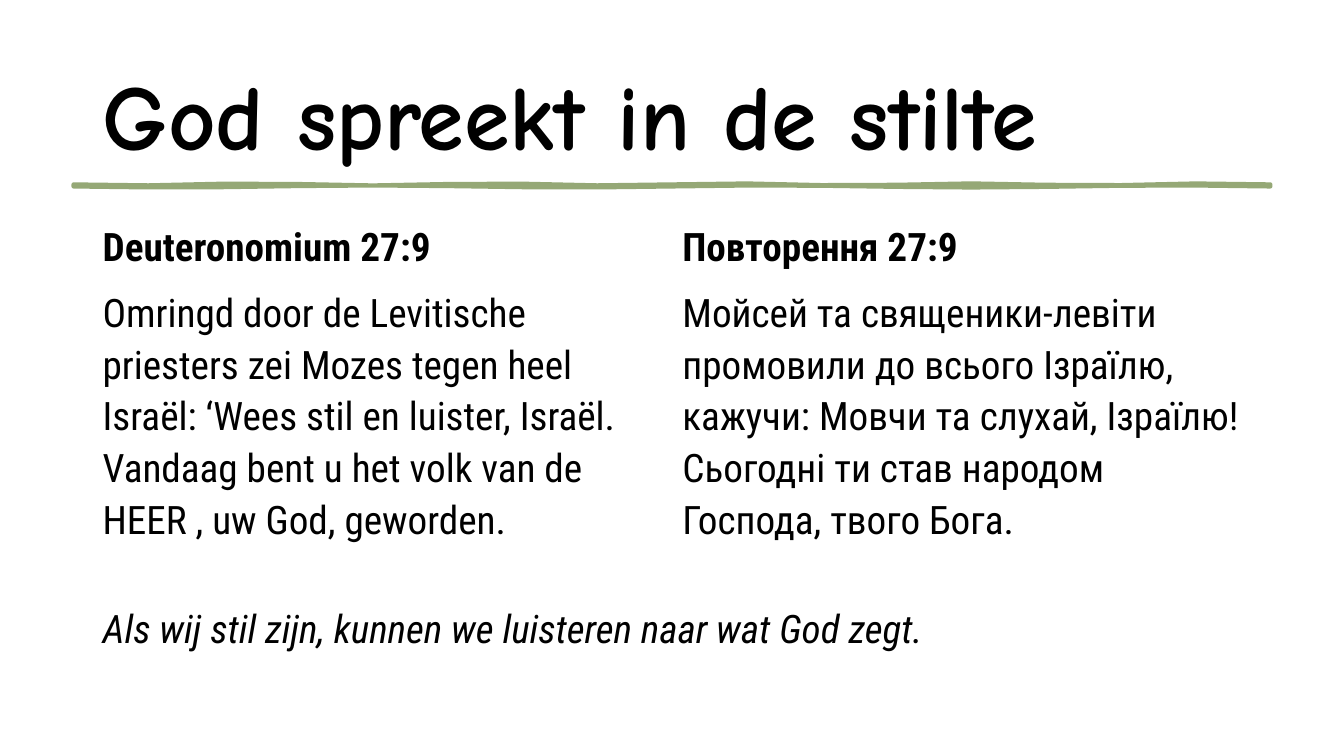
from dataclasses import dataclass
from math import pi, sin

from lxml.etree import SubElement
from pptx import Presentation
from pptx.dml.color import RGBColor
from pptx.enum.shapes import MSO_SHAPE
from pptx.enum.text import MSO_ANCHOR, MSO_AUTO_SIZE, PP_ALIGN
from pptx.oxml.ns import qn
from pptx.util import Inches, Pt


@dataclass(frozen=True)
class Theme:
    ink: RGBColor = RGBColor(0, 0, 0)
    paper: RGBColor = RGBColor(0xFF, 0xFF, 0xFF)
    accent: RGBColor = RGBColor(0x95, 0xA8, 0x76)
    title_font: str = "Comic Neue"
    body_font: str = "Roboto Condensed"
    title_size: Pt = Pt(66)
    body_size: Pt = Pt(28)
    rule_width: Pt = Pt(3)


THEME = Theme()
SLIDE = (13.33, 7.5)
BODY = dict(name=THEME.body_font, size=THEME.body_size)
SPACED = dict(line_spacing=1.1, space_before=Pt(10))

VERSES = [
    ("Deuteronomium 27:9",
     "Omringd door de Levitische priesters zei Mozes tegen heel Israël: "
     "‘Wees stil en luister, Israël. Vandaag bent u het volk van de HEER , "
     "uw God, geworden."),
    ("Повторення 27:9",
     "Мойсей та священики-левіти промовили до всього Ізраїлю, кажучи: "
     "Мовчи та слухай, Ізраїлю! Сьогодні ти став народом Господа, твого Бога."),
]


def set_attrs(obj, values):
    for key, value in values.items():
        setattr(obj, key, value)


def paint(sp, color):
    sp.shadow.inherit = False
    sp.fill.solid()
    sp.fill.fore_color.rgb = color


def write(p, text, font, para=None):
    set_attrs(p, dict(alignment=PP_ALIGN.LEFT, **(para or {})))
    r = p.add_run()
    r.text = text
    set_attrs(r.font, font)
    r.font.color.rgb = THEME.ink


def add_text_box(s, box):
    tf = s.shapes.add_textbox(*map(Inches, box)).text_frame
    tf.word_wrap = True
    return tf


def add_backdrop(s, box):
    sp = s.shapes.add_shape(MSO_SHAPE.RECTANGLE, *map(Inches, box))
    paint(sp, THEME.paper)
    sp.line.fill.background()
    # Behind the title placeholder
    s.shapes.title.element.addprevious(sp.element)


def add_title(s, box, text):
    title = s.shapes.title
    set_attrs(title, dict(zip(("left", "top", "width", "height"), map(Inches, box))))
    tf = title.text_frame
    set_attrs(tf, dict(word_wrap=True, auto_size=MSO_AUTO_SIZE.NONE,
                       vertical_anchor=MSO_ANCHOR.MIDDLE))
    write(tf.paragraphs[0], text,
          dict(name=THEME.title_font, size=THEME.title_size, bold=True))


def add_brush_rule(s, box, steps=16):
    """A hand-drawn line: two edges that waver independently."""
    left, top, width, height = box

    def edge(y, waves):
        return [(Inches(left + width * i / steps),
                 Inches(y + 0.01 * sin(2 * pi * waves * i / steps)))
                for i in range(steps + 1)]

    outline = edge(top, 5) + edge(top + height, 3)[::-1]
    builder = s.shapes.build_freeform(*outline[0], scale=1.0)
    builder.add_line_segments(outline[1:], close=True)
    sp = builder.convert_to_shape()
    paint(sp, THEME.accent)
    sp.line.color.rgb = THEME.accent
    sp.line.width = THEME.rule_width
    SubElement(sp.element.spPr.find(qn("a:ln")), qn("a:round"))


def add_verses(s, box, verses):
    left, top, width, height = box
    column = width / len(verses)
    for i, (reference, verse) in enumerate(verses):
        tf = add_text_box(s, (left + i * column, top, column, height))
        write(tf.paragraphs[0], reference, dict(BODY, bold=True), SPACED)
        write(tf.add_paragraph(), verse, dict(BODY, bold=False), SPACED)


def add_closing(s, box, text):
    tf = add_text_box(s, box)
    tf.auto_size = MSO_AUTO_SIZE.SHAPE_TO_FIT_TEXT
    write(tf.paragraphs[0], text, dict(BODY, italic=True))


def main():
    prs = Presentation()
    prs.slide_width, prs.slide_height = map(Inches, SLIDE)
    s = prs.slides.add_slide(prs.slide_layouts[5])

    # Backdrop, then the heading with its brushed underline
    add_backdrop(s, (0, 0, *SLIDE))
    add_brush_rule(s, (0.73, 1.83, 11.87, 0.02))
    add_title(s, (0.92, 0.4, 11.5, 1.45), "God spreekt in de stilte")

    # Verse in two languages, then the closing thought
    add_verses(s, (0.92, 2.11, 11.5, 3.85), VERSES)
    add_closing(s, (0.92, 5.95, 10.91, 0.57),
                "Als wij stil zijn, kunnen we luisteren naar wat God zegt.")
    prs.save("out.pptx")


if __name__ == "__main__":
    main()
